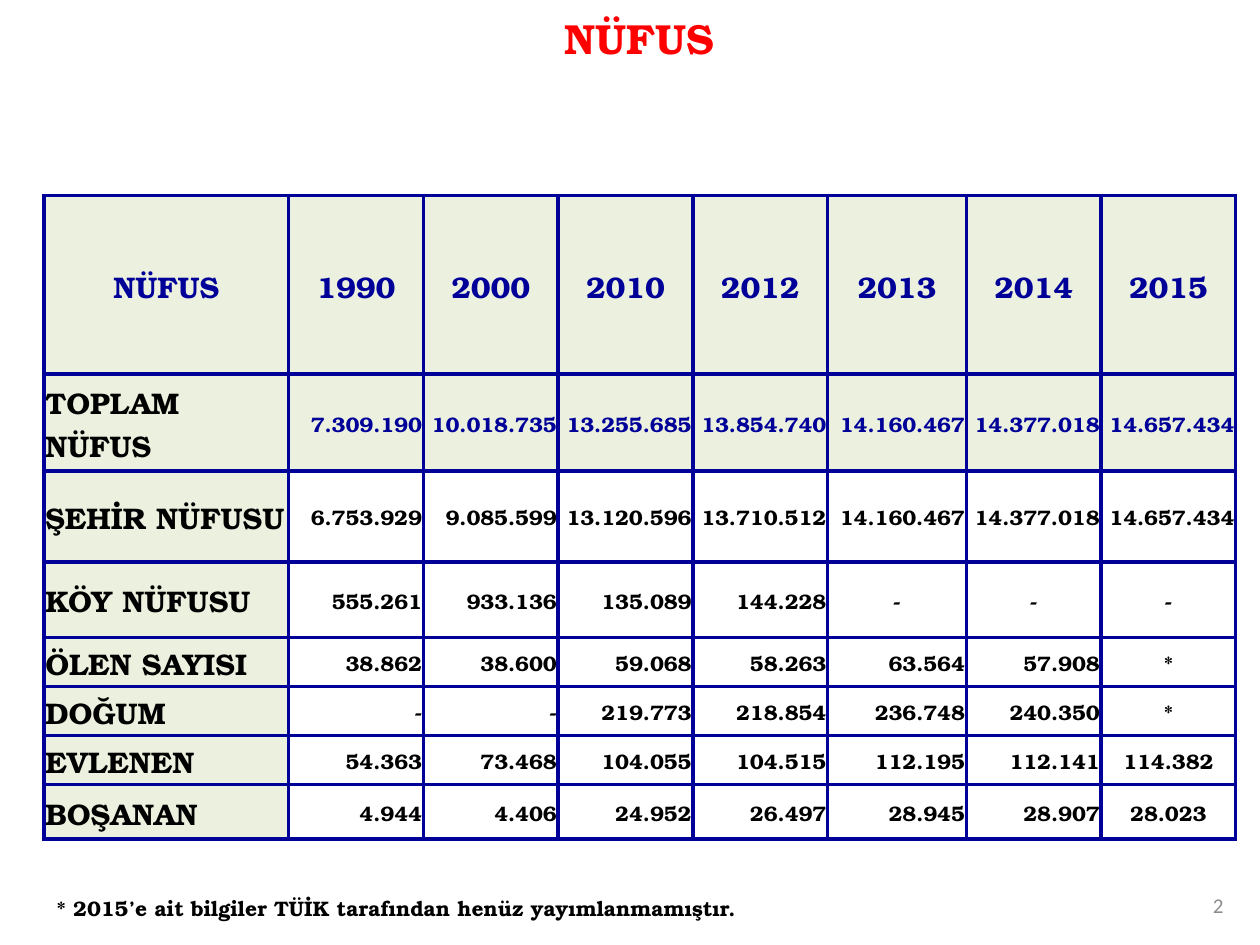
from lxml import etree
from pptx import Presentation, util as u
from pptx.dml.color import RGBColor
from pptx.enum import text
from pptx.oxml.ns import qn

NAVY = RGBColor(0x00, 0x00, 0x99)
RED = RGBColor(0xFF, 0x00, 0x00)
BLACK = RGBColor(0x00, 0x00, 0x00)
GRAY = RGBColor(0x8C, 0x8C, 0x8C)
PALE_GREEN = RGBColor(0xEB, 0xF1, 0xDE)

LEFT, CENTER, RIGHT, JUSTIFY = (text.PP_ALIGN.LEFT, text.PP_ALIGN.CENTER,
                                text.PP_ALIGN.RIGHT, text.PP_ALIGN.JUSTIFY)
TOP, MIDDLE = text.MSO_ANCHOR.TOP, text.MSO_ANCHOR.MIDDLE

POPULATION = [
    ["NÜFUS", "1990", "2000", "2010", "2012", "2013", "2014", "2015"],
    ["TOPLAM NÜFUS", "7.309.190", "10.018.735", "13.255.685", "13.854.740",
     "14.160.467", "14.377.018", "14.657.434"],
    ["ŞEHİR NÜFUSU", "6.753.929", "9.085.599", "13.120.596", "13.710.512",
     "14.160.467", "14.377.018", "14.657.434"],
    ["KÖY NÜFUSU", "555.261", "933.136", "135.089", "144.228", "-", "-", "-"],
    ["ÖLEN SAYISI", "38.862", "38.600", "59.068", "58.263", "63.564", "57.908", "*"],
    ["DOĞUM", "-", "-", "219.773", "218.854", "236.748", "240.350", "*"],
    ["EVLENEN", "54.363", "73.468", "104.055", "104.515", "112.195", "112.141", "114.382"],
    ["BOŞANAN", "4.944", "4.406", "24.952", "26.497", "28.945", "28.907", "28.023"],
]
TOTAL_ROW, VILLAGE_ROW, LAST_COLUMN = 1, 3, 7

# Table sizes in grid units
COLUMN_WIDTHS = [38.8] + [21.4] * 4 + [22] + [21.4] * 2
ROW_HEIGHTS = [28.4, 15.4, 14.4, 12, 7.8, 7.8, 7.8, 8.6]


class SlideBuilder:
    """Places elements on a grid of 200 columns by 150 rows."""

    font = "TeX Gyre Bonum"
    border_width = u.Pt(2.25)
    cell_margin = u.Inches(0.01)

    def __init__(self, presentation):
        self.column = presentation.slide_width / 200
        self.row = presentation.slide_height / 150
        self.slide = presentation.slides.add_slide(presentation.slide_layouts[5])

    def box(self, left, top, width, height):
        return (round(left * self.column), round(top * self.row),
                round(width * self.column), round(height * self.row))

    def set_text(self, text_frame, words, size, color, align, bold=True, font=None):
        text_frame.text = words
        paragraph = text_frame.paragraphs[0]
        paragraph.alignment = align
        for run in paragraph.runs:
            run.font.name = font or self.font
            run.font.size = u.Pt(size)
            run.font.bold = bold
            run.font.color.rgb = color

    def title(self, words, box):
        shape = self.slide.shapes.title
        shape.left, shape.top, shape.width, shape.height = self.box(*box)
        frame = shape.text_frame
        frame.auto_size = text.MSO_AUTO_SIZE.NONE
        frame.vertical_anchor = TOP
        self.set_text(frame, words, 24, RED, CENTER)

    def label(self, words, box, color=BLACK, align=LEFT, anchor=TOP, **style):
        frame = self.slide.shapes.add_textbox(*self.box(*box)).text_frame
        frame.word_wrap = True
        frame.vertical_anchor = anchor
        self.set_text(frame, words, 12, color, align, **style)

    def border(self, cell):
        properties = cell._tc.get_or_add_tcPr()
        for index, side in enumerate(("a:lnL", "a:lnR", "a:lnT", "a:lnB")):
            line = etree.Element(qn(side), w=str(self.border_width))
            fill = etree.SubElement(line, qn("a:solidFill"))
            etree.SubElement(fill, qn("a:srgbClr"), val=str(NAVY))
            properties.insert(index, line)

    def cell(self, cell, words, size, color, align, shaded):
        cell.margin_left = cell.margin_right = cell.margin_top = self.cell_margin
        cell.margin_bottom = 0
        cell.vertical_anchor = MIDDLE
        if shaded:
            cell.fill.solid()
            cell.fill.fore_color.rgb = PALE_GREEN
        else:
            cell.fill.background()
        self.border(cell)
        self.set_text(cell.text_frame, words, size, color, align)

    def table(self, data, left, top, widths, heights):
        box = self.box(left, top, sum(widths), sum(heights))
        table = self.slide.shapes.add_table(len(data), len(data[0]), *box).table
        table.first_row = table.horz_banding = False
        for column, width in zip(table.columns, widths):
            column.width = round(width * self.column)
        for row, height in zip(table.rows, heights):
            row.height = round(height * self.row)
        for r, values in enumerate(data):
            for c, words in enumerate(values):
                heading = r == 0 or c == 0
                navy = r == 0 or (r == TOTAL_ROW and c > 0)
                centered = (r == 0 or (r == VILLAGE_ROW and words == "-")
                            or (r > VILLAGE_ROW and c == LAST_COLUMN))
                align = CENTER if centered else JUSTIFY if c == 0 else RIGHT
                self.cell(table.cell(r, c), words, 17 if heading else 12,
                          NAVY if navy else BLACK, align,
                          shaded=heading or r == TOTAL_ROW)


def main():
    presentation = Presentation()
    presentation.slide_width, presentation.slide_height = u.Inches(10), u.Inches(7.5)
    builder = SlideBuilder(presentation)

    # Title
    builder.title("NÜFUS", (10.2, 1, 182.6, 10))

    # Population by year
    builder.table(POPULATION, 7, 31, COLUMN_WIDTHS, ROW_HEIGHTS)

    # Footnote and page number
    builder.label("* 2015’e ait bilgiler TÜİK tarafından henüz yayımlanmamıştır.",
                  (7, 141.2, 168.6, 6))
    builder.label("2", (185, 139.6, 11.2, 8), GRAY, RIGHT, MIDDLE,
                  bold=False, font="Calibri")

    presentation.save("out.pptx")


if __name__ == "__main__":
    main()
